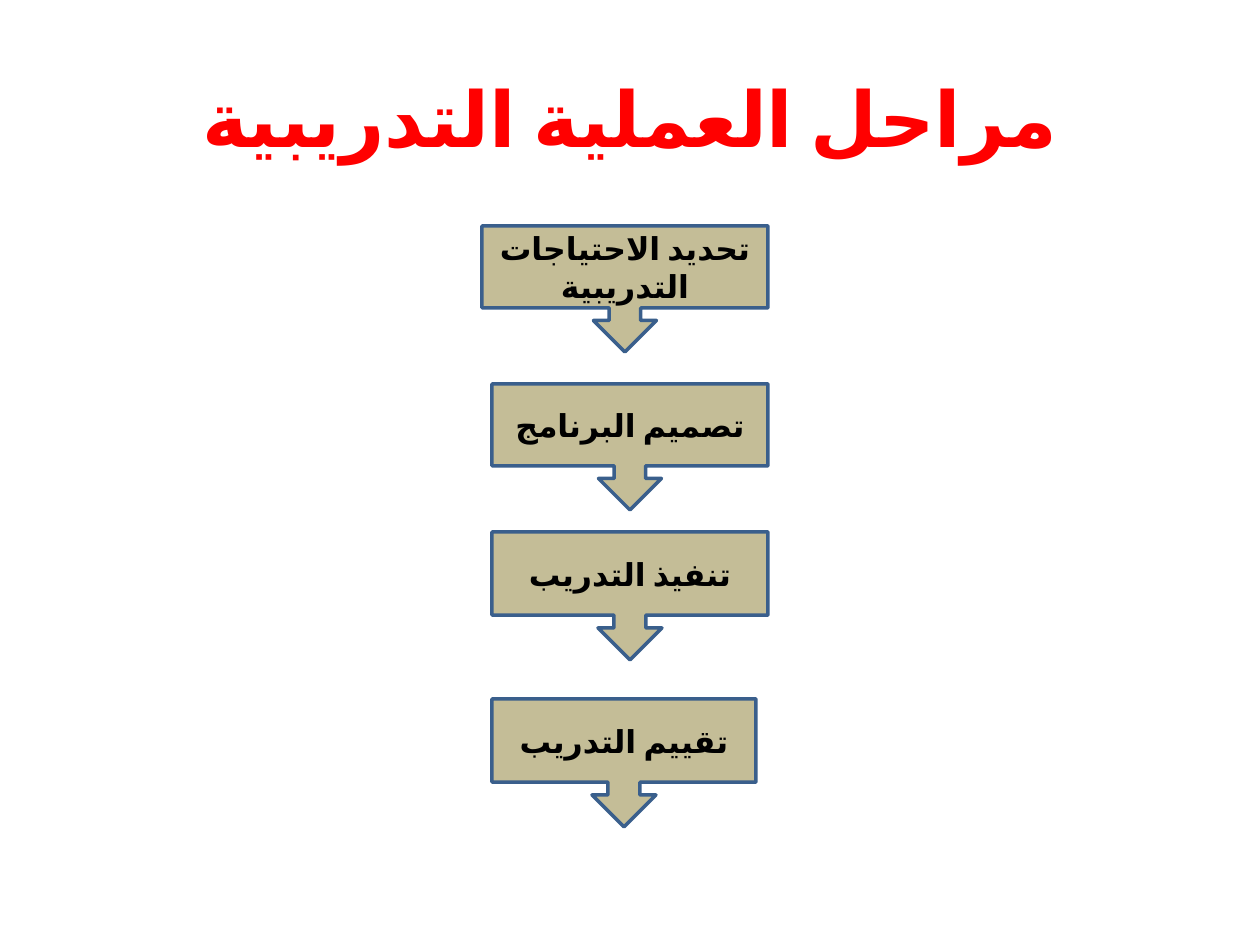
"""Build a slide showing the four stages of the training process."""
from lxml.etree import SubElement
from pptx import Presentation
from pptx.dml.color import RGBColor
from pptx.enum.lang import MSO_LANGUAGE_ID
from pptx.enum.shapes import MSO_SHAPE
from pptx.enum.text import MSO_ANCHOR, PP_ALIGN
from pptx.oxml.ns import qn
from pptx.util import Emu, Pt

PX = 914400 // 126
RED = RGBColor(0xFF, 0x00, 0x00)
BLACK = RGBColor(0x00, 0x00, 0x00)
TAN = RGBColor(0xC4, 0xBD, 0x97)
BLUE = RGBColor(0x3A, 0x5F, 0x8C)


def place(shape, left, top, width, height):
    shape.left, shape.top = Emu(left * PX), Emu(top * PX)
    shape.width, shape.height = Emu(width * PX), Emu(height * PX)


def write(shape, text, size, color):
    text_frame = shape.text_frame
    text_frame.text = text
    text_frame.word_wrap = True
    text_frame.vertical_anchor = MSO_ANCHOR.MIDDLE
    paragraph = text_frame.paragraphs[0]
    paragraph.alignment = PP_ALIGN.CENTER
    paragraph._p.get_or_add_pPr().set("rtl", "1")
    run = paragraph.runs[0]
    font = run.font
    font.name = "Calibri"
    font.size = Pt(size)
    font.bold = True
    font.color.rgb = color
    font.language_id = MSO_LANGUAGE_ID.ARABIC
    SubElement(run._r.get_or_add_rPr(), qn("a:cs")).set("typeface", "Calibri")


presentation = Presentation()
presentation.slide_width = Emu(1260 * PX)
presentation.slide_height = Emu(945 * PX)
slide = presentation.slides.add_slide(presentation.slide_layouts[5])

title = slide.shapes.title
place(title, 63, 38, 1134, 157)
write(title, "مراحل العملية التدريبية", 44, RED)

stages = [
    ("تحديد الاحتياجات التدريبية", 482, 226, 286, 126),
    ("تصميم البرنامج", 492, 384, 276, 126),
    ("تنفيذ التدريب", 492, 532, 276, 128),
    ("تقييم التدريب", 492, 699, 264, 128),
]
for text, left, top, width, height in stages:
    callout = slide.shapes.add_shape(MSO_SHAPE.DOWN_ARROW_CALLOUT, 0, 0, 0, 0)
    place(callout, left, top, width, height)
    callout.shadow.inherit = False
    callout.fill.solid()
    callout.fill.fore_color.rgb = TAN
    callout.line.color.rgb = BLUE
    callout.line.width = Pt(2)
    write(callout, text, 18, BLACK)

presentation.save("out.pptx")
